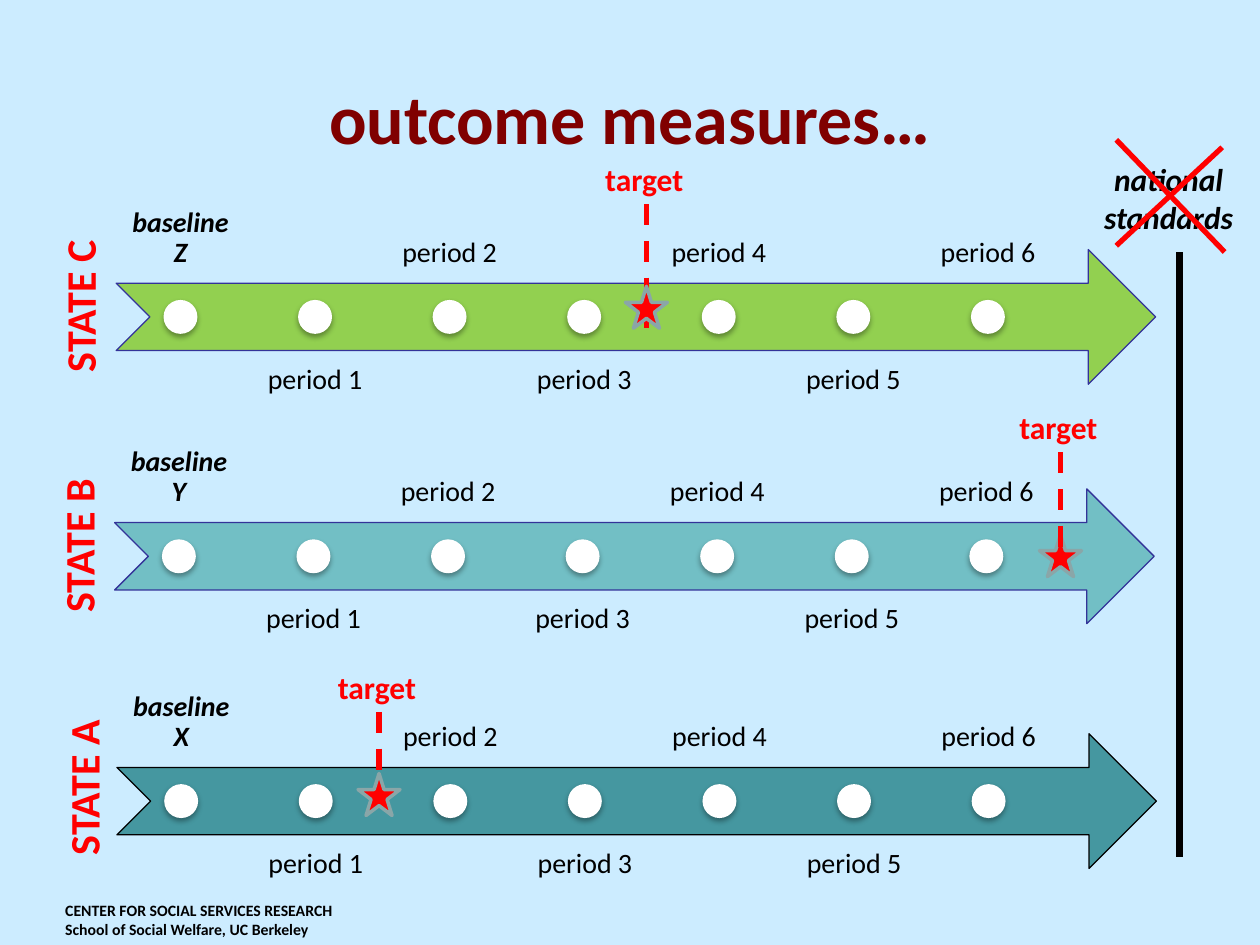
from dataclasses import dataclass
from typing import Any

from lxml.etree import SubElement
from pptx import Presentation
from pptx.dml.color import RGBColor
from pptx.enum.dml import MSO_LINE
from pptx.enum.shapes import MSO_CONNECTOR as Connector, MSO_SHAPE as Preset
from pptx.enum.text import MSO_ANCHOR as Anchor, PP_ALIGN as Align
from pptx.oxml.ns import qn
from pptx.util import Pt

COLORS = {
    "sky": "CCECFF", "maroon": "800000", "red": "FF0000", "black": "000000",
    "white": "FFFFFF", "navy": "333399", "green": "92D050", "aqua": "72BFC5",
    "teal": "4597A0", "gray": "8AA6A8",
}
ARROW_WIDTH, ARROW_HEIGHT = 594, 77
LABEL_WIDTH, LABEL_SHIFT = 73.5, 57.6
DOT_SIZE, STAR_SIZE = 19.4, 24
PERIOD_STEP = 76.9


def color(name):
    return RGBColor.from_string(COLORS[name])


@dataclass
class Lane:
    state: str
    baseline: str
    left: float
    top: float
    fill: str
    outline: str
    state_left: float
    state_top: float
    target_x: float
    target_top: float
    line_end: float
    star_top: float
    line_in_front: bool = False


@dataclass
class Painter:
    """Draws styled elements on the current slide, with lengths in points."""

    slide: Any
    font: str = "Calibri"

    def style(self, para, size, ink, bold=False, italic=False, align=Align.CENTER):
        para.alignment = align
        font = para.font
        font.name, font.size = self.font, Pt(size)
        font.bold, font.italic = bold, italic
        font.color.rgb = color(ink)

    def title(self, text, left, top, width, height):
        title = self.slide.shapes.title
        title.left, title.top = Pt(left), Pt(top)
        title.width, title.height = Pt(width), Pt(height)
        title.text_frame.text = text
        title.text_frame.vertical_anchor = Anchor.MIDDLE
        self.style(title.text_frame.paragraphs[0], 40, "maroon", bold=True)

    def text(self, text, left, top, width, height, size, ink="black",
             anchor=Anchor.TOP, inset=None, spacing=None, rotation=0, **look):
        box = self.slide.shapes.add_textbox(Pt(left), Pt(top), Pt(width), Pt(height))
        box.rotation = rotation
        frame = box.text_frame
        frame.word_wrap = True
        frame.vertical_anchor = anchor
        if inset is not None:
            frame.margin_left = frame.margin_right = Pt(inset)
            frame.margin_top = frame.margin_bottom = Pt(inset)
        frame.text = text
        for para in frame.paragraphs:
            if spacing:
                para.line_spacing = spacing
            self.style(para, size, ink, **look)

    def shape(self, preset, left, top, width, height, fill, outline=None, weight=0.75):
        shape = self.slide.shapes.add_shape(
            preset, Pt(left), Pt(top), Pt(width), Pt(height))
        shape.shadow.inherit = False
        shape.fill.solid()
        shape.fill.fore_color.rgb = color(fill)
        if outline:
            shape.line.color.rgb = color(outline)
            shape.line.width = Pt(weight)
        else:
            shape.line.fill.background()
        return shape

    def dot(self, left, top):
        dot = self.shape(Preset.OVAL, left, top, DOT_SIZE, DOT_SIZE, "white")
        effects = dot.element.spPr.find(qn("a:effectLst"))
        shadow = SubElement(effects, qn("a:outerShdw"), blurRad=str(Pt(3.1)),
                            dist=str(Pt(1.8)), dir="5400000", rotWithShape="0")
        tint = SubElement(shadow, qn("a:srgbClr"), val=COLORS["black"])
        SubElement(tint, qn("a:alpha"), val="35000")

    def line(self, start, end, ink="red", weight=3, dashed=False):
        line = self.slide.shapes.add_connector(
            Connector.STRAIGHT, *(Pt(value) for value in (*start, *end)))
        line.line.color.rgb = color(ink)
        line.line.width = Pt(weight)
        if dashed:
            line.line.dash_style = MSO_LINE.DASH
        SubElement(line.element.spPr, qn("a:effectLst"))

    def timeline(self, lane):
        self.shape(Preset.NOTCHED_RIGHT_ARROW, lane.left, lane.top,
                   ARROW_WIDTH, ARROW_HEIGHT, lane.fill, lane.outline)
        for period in range(7):
            left = lane.left + period * PERIOD_STEP
            below = period % 2 == 1
            first = period == 0
            self.text(lane.baseline if first else f"period {period}", left,
                      lane.top + (LABEL_SHIFT if below else -LABEL_SHIFT),
                      LABEL_WIDTH, ARROW_HEIGHT, 16,
                      anchor=Anchor.TOP if below else Anchor.BOTTOM,
                      inset=8.5, spacing=0.9, bold=first, italic=first)
            self.dot(left + (LABEL_WIDTH - DOT_SIZE) / 2,
                     lane.top + (ARROW_HEIGHT - DOT_SIZE) / 2)
        self.text(lane.state, lane.state_left, lane.state_top, 138, 36, 24, "red",
                  rotation=270, bold=True)

    def target(self, lane):
        x = lane.target_x
        line = (x, lane.target_top + 28.8), (x, lane.line_end)
        self.text("target", x - 37.2, lane.target_top, 72, 29, 18, "red", bold=True)
        if not lane.line_in_front:
            self.line(*line, dashed=True)
        self.shape(Preset.STAR_5_POINT, x - STAR_SIZE / 2, lane.star_top,
                   STAR_SIZE, STAR_SIZE, "red", "gray", 2)
        if lane.line_in_front:
            self.line(*line, dashed=True)


def main():
    deck = Presentation()
    deck.slide_width, deck.slide_height = Pt(720), Pt(540)
    slide = deck.slides.add_slide(deck.slide_layouts[5])
    slide.background.fill.solid()
    slide.background.fill.fore_color.rgb = color("sky")
    painter = Painter(slide)

    lanes = [
        Lane("STATE B", "baseline Y", 65.5, 279.4, "aqua", "navy", -24.5, 293.8,
             606, 229.7, 314.6, 305.5, line_in_front=True),
        Lane("STATE C", "baseline Z", 66.4, 142.6, "green", "navy", -23.8, 157,
             369.4, 87.8, 187.2, 163.6),
        Lane("STATE A", "baseline X", 66.8, 419.3, "teal", "black", -21.6, 432,
             216.6, 378, 442, 442),
    ]
    painter.title("outcome measures…", 36, 21.6, 648, 90)
    for lane in lanes:
        painter.timeline(lane)
    for lane in lanes:
        painter.target(lane)

    painter.line((673.9, 144), (673.9, 489.6), "black", 4)
    painter.text("national standards", 617.8, 87.8, 100, 51, 18, bold=True, italic=True)
    painter.line((637.9, 79.9), (699.8, 144))
    painter.line((698.4, 84.2), (637.9, 140.4))
    painter.text("CENTER FOR SOCIAL SERVICES RESEARCH\nSchool of Social Welfare, UC Berkeley",
                 30.2, 511.2, 210, 29, 9, bold=True, align=Align.LEFT)
    deck.save("out.pptx")


if __name__ == "__main__":
    main()
